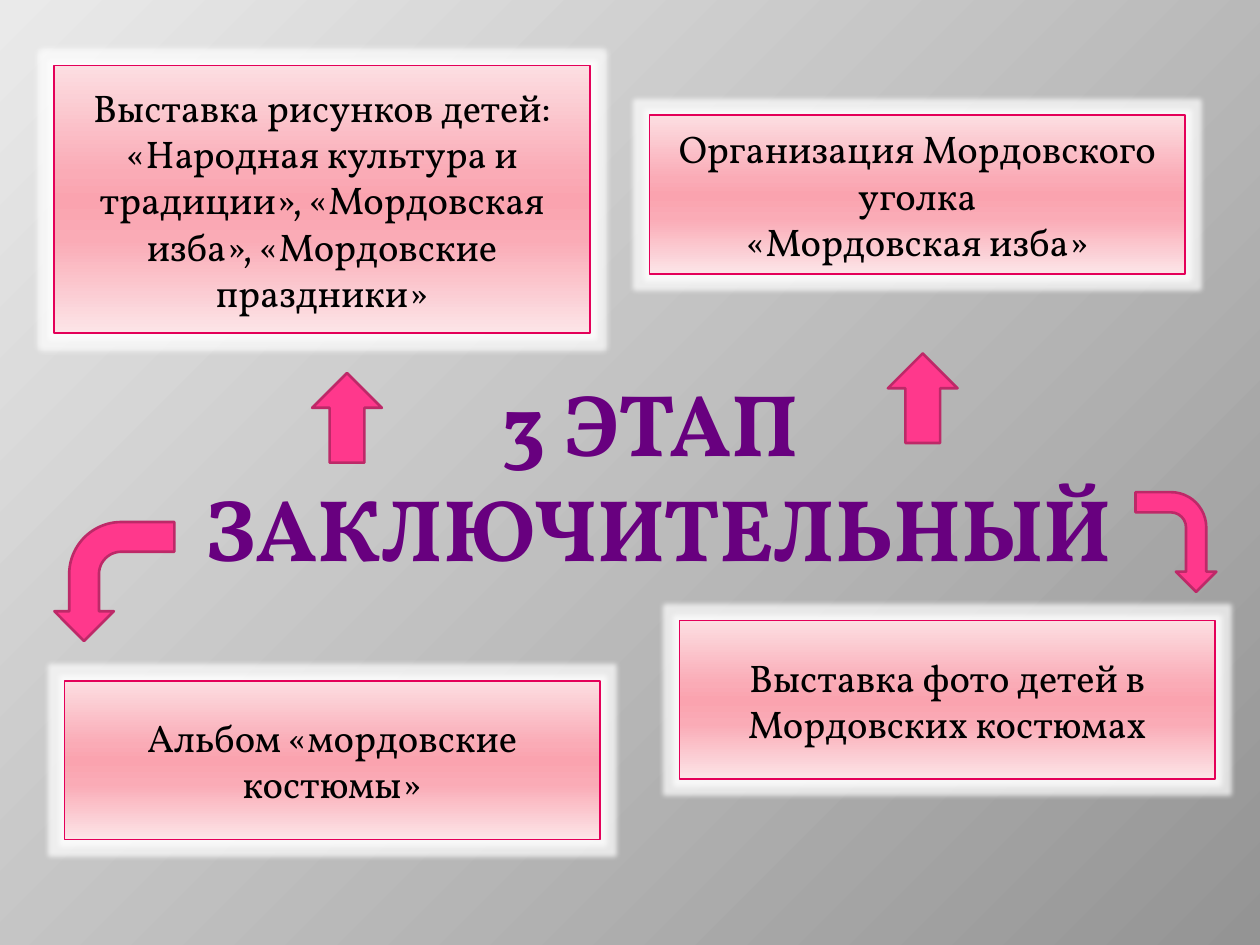
from lxml.etree import SubElement
from pptx import Presentation
from pptx.dml.color import RGBColor
from pptx.enum.shapes import MSO_SHAPE as Shape
from pptx.enum.text import MSO_ANCHOR as Anchor, MSO_AUTO_SIZE as AutoSize, PP_ALIGN as Align
from pptx.oxml.ns import qn
from pptx.util import Pt

FONT = "Vollkorn"
COLORS = {
    "title": "68007F",
    "text": "000000",
    "card_line": "E40059",
    "glow": "FFFFFF",
    "arrow": "FF388C",
    "arrow_line": "BD2968",
}
BACKDROP_STOPS = [(0, "EAEAEA"), (100, "949494")]
CARD_STOPS = [(0, "FCDEE2"), (40, "FAABB6"), (50, "FAA3AF"), (65, "FAABB6"), (100, "FCE5E8")]

CARD_WIDTH, CARD_HEIGHT = 306, 90.7
# left, top, height, paragraphs
CARDS = [
    (31, 37.5, 153, ["Выставка рисунков детей: «Народная культура и традиции», "
                     "«Мордовская изба», «Мордовские праздники»"]),
    (36.8, 389, CARD_HEIGHT, ["Альбом «мордовские костюмы»"]),
    (388.2, 354.6, CARD_HEIGHT, ["Выставка фото детей в Мордовских костюмах"]),
    (371.2, 65.9, CARD_HEIGHT, ["Организация Мордовского уголка", "«Мордовская изба»"]),
]
# preset, box, rotation, flips
ARROWS = [
    (Shape.BENT_ARROW, (31.4, 298, 68, 68.6), 270, ["flipH"]),
    (Shape.BENT_ARROW, (643.5, 286.6, 57, 46.2), 270, ["flipH", "flipV"]),
    (Shape.DOWN_ARROW, (178.4, 213.2, 39.8, 51.2), 0, ["flipV"]),
    (Shape.DOWN_ARROW, (507.4, 202, 39.8, 51.2), 0, ["flipV"]),
]


def rgb(name):
    return RGBColor.from_string(COLORS[name])


def paint_gradient(fill, owner, stops, angle):
    """Fill with the given (percent, colour) stops; owner holds the gradient's XML."""
    fill.gradient()
    fill.gradient_angle = angle
    stop_list = owner.find(".//" + qn("a:gsLst"))
    for old_stop in list(stop_list):
        stop_list.remove(old_stop)
    for percent, color in stops:
        stop = SubElement(stop_list, qn("a:gs"), pos=str(percent * 1000))
        SubElement(stop, qn("a:srgbClr"), val=color)


def add_glow(shape, radius):
    effects = shape.element.spPr.find(qn("a:effectLst"))
    glow = SubElement(effects, qn("a:glow"), rad=str(Pt(radius)))
    color = SubElement(glow, qn("a:srgbClr"), val=COLORS["glow"])
    SubElement(color, qn("a:alpha"), val="70000")


def write_paragraphs(frame, lines, size, color, bold=False):
    frame.text = "\n".join(lines)
    for paragraph in frame.paragraphs:
        paragraph.alignment = Align.CENTER
        paragraph.font.name = FONT
        paragraph.font.size = Pt(size)
        paragraph.font.bold = bold
        paragraph.font.color.rgb = rgb(color)


def place_title(slide, left, top, width, height):
    title = slide.shapes.title
    title.left, title.top, title.width, title.height = map(Pt, (left, top, width, height))
    frame = title.text_frame
    write_paragraphs(frame, ["3 ЭТАП ", "ЗАКЛЮЧИТЕЛЬНЫЙ"], 50, "title", bold=True)
    frame.word_wrap = False
    frame.auto_size = AutoSize.SHAPE_TO_FIT_TEXT
    frame.vertical_anchor = Anchor.TOP


def add_card(slide, left, top, width, height, lines):
    card = slide.shapes.add_shape(Shape.RECTANGLE, *map(Pt, (left, top, width, height)))
    paint_gradient(card.fill, card.element.spPr, CARD_STOPS, 270)
    card.line.color.rgb = rgb("card_line")
    card.line.width = Pt(0.94)
    card.shadow.inherit = False
    add_glow(card, 6)
    frame = card.text_frame
    frame.word_wrap = True
    frame.vertical_anchor = Anchor.MIDDLE
    write_paragraphs(frame, lines, 22, "text")


def add_arrow(slide, preset, box, rotation, flips):
    arrow = slide.shapes.add_shape(preset, *map(Pt, box))
    arrow.rotation = rotation
    for flip in flips:
        arrow.element.spPr.find(qn("a:xfrm")).set(flip, "1")
    arrow.fill.solid()
    arrow.fill.fore_color.rgb = rgb("arrow")
    arrow.line.color.rgb = rgb("arrow_line")
    arrow.line.width = Pt(1.5)
    arrow.shadow.inherit = False


def main():
    deck = Presentation()
    deck.slide_width, deck.slide_height = Pt(720), Pt(540)
    slide = deck.slides.add_slide(deck.slide_layouts[5])

    # Backdrop
    paint_gradient(slide.background.fill, slide.element, BACKDROP_STOPS, 315)

    # Stage name in the middle
    place_title(slide, 102.2, 207.4, 548.6, 128.2)

    # Outcomes around it
    for left, top, height, lines in CARDS:
        add_card(slide, left, top, CARD_WIDTH, height, lines)

    # Arrows from the stage to its outcomes
    for preset, box, rotation, flips in ARROWS:
        add_arrow(slide, preset, box, rotation, flips)

    deck.save("out.pptx")


if __name__ == "__main__":
    main()
